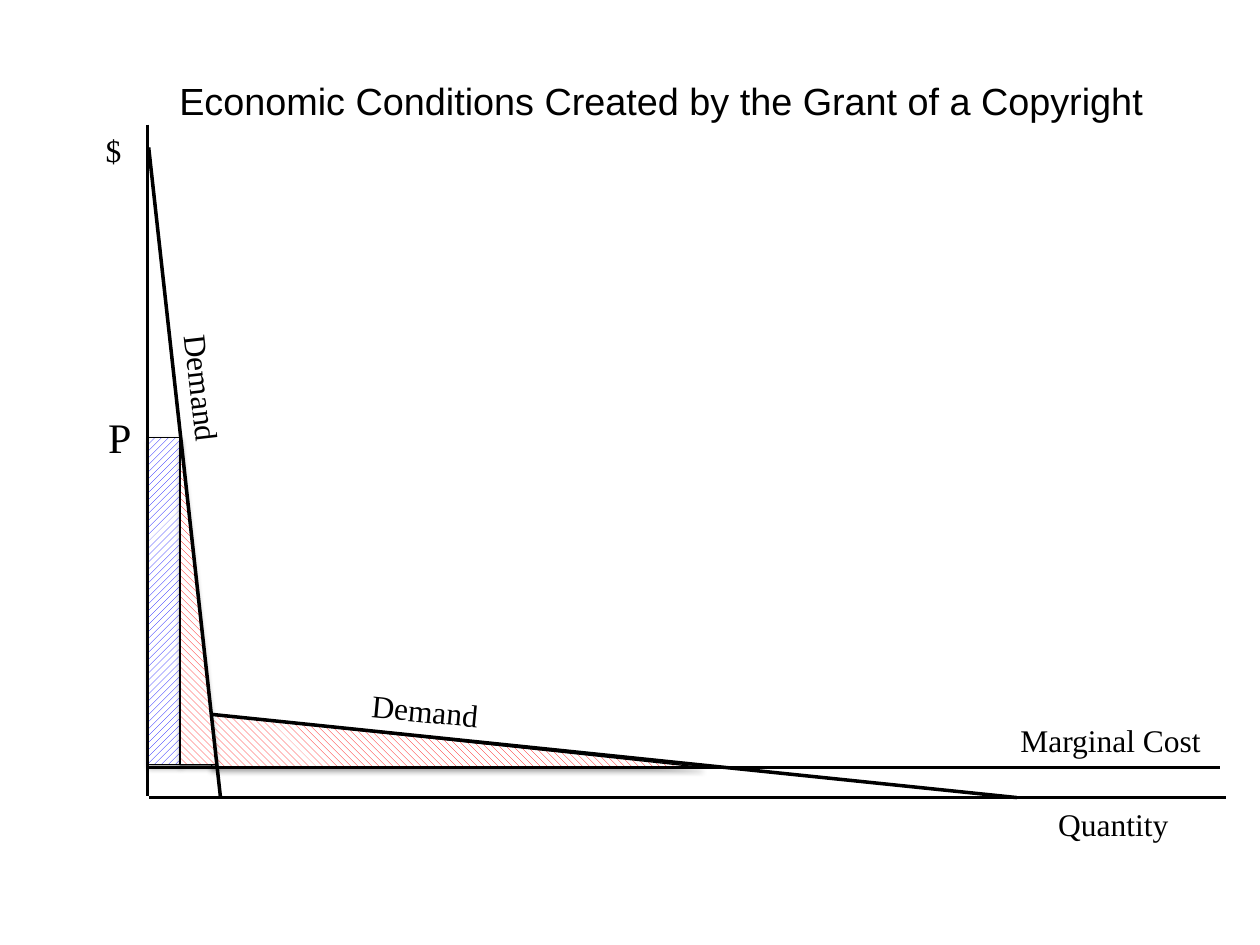
from lxml.etree import SubElement
from pptx import Presentation
from pptx.dml.color import RGBColor
from pptx.enum.dml import MSO_PATTERN
from pptx.enum.shapes import MSO_CONNECTOR, MSO_SHAPE
from pptx.enum.text import MSO_ANCHOR, PP_ALIGN
from pptx.oxml.ns import qn
from pptx.util import Inches, Pt

THEME = {
    "ink": RGBColor(0, 0, 0),
    "paper": RGBColor(255, 255, 255),
    "profit": RGBColor(0, 0, 255),
    "loss": RGBColor(255, 0, 0),
    "title": {"name": "Arial", "size": Pt(21.6)},
    "label": {"name": "Times New Roman", "size": Pt(18)},
    "price": {"name": "Times New Roman", "size": Pt(24)},
    "curve": Pt(2),
    "outline": Pt(0.75),
}

# Shared positions in the diagram, in inches
AXIS_X, AXIS_Y = 1.18, 6.33
COST_Y, PRICE_Y = 6.09, 3.47
KINK_X, KINK_Y = 1.68, 5.67


def write(shape, text, style):
    """Put one line of text in the shape and format it with a theme style."""
    paragraph = shape.text_frame.paragraphs[0]
    run = paragraph.add_run()
    run.text = text
    for name, value in THEME[style].items():
        setattr(run.font, name, value)
    run.font.color.rgb = THEME["ink"]
    return paragraph


presentation = Presentation()
presentation.slide_width, presentation.slide_height = Inches(10), Inches(7.5)
slide = presentation.slides.add_slide(presentation.slide_layouts[5])

# Title
title = slide.shapes.title
title.left, title.top, title.width, title.height = map(Inches, (1, 0.42, 8.5, 0.75))
title.text_frame.vertical_anchor = MSO_ANCHOR.MIDDLE
write(title, "Economic Conditions Created by the Grant of a Copyright",
      "title").alignment = PP_ALIGN.CENTER

# Labels: text, style, left, top, width, height, rotation
labels = [
    ("$", "label", 0.74, 0.99, 0.51, 0.4, 0),
    ("Quantity", "label", 8.3, 6.34, 1.43, 0.4, 0),
    ("Marginal Cost", "label", 8, 5.67, 2.26, 0.4, 0),
    ("Demand", "label", 0.77, 3.23, 1.75, 0.4, 83.4),
    ("Demand", "label", 2.85, 5.47, 1.75, 0.4, 5.4),
    ("P", "price", 0.76, 3.22, 0.38, 0.5, 0),
]
for text, style, left, top, width, height, rotation in labels:
    box = slide.shapes.add_textbox(*map(Inches, (left, top, width, height)))
    box.rotation = rotation
    box.text_frame.word_wrap = style == "label"
    write(box, text, style)

# Hatched areas: monopoly profit, then the two deadweight losses
up, down = MSO_PATTERN.WIDE_UPWARD_DIAGONAL, MSO_PATTERN.WIDE_DOWNWARD_DIAGONAL
areas = [
    (MSO_SHAPE.RECTANGLE, up, "profit", AXIS_X, PRICE_Y, 0.25, 2.6),
    (MSO_SHAPE.RIGHT_TRIANGLE, down, "loss", KINK_X, KINK_Y, 3.89, 0.42),
    (MSO_SHAPE.RIGHT_TRIANGLE, down, "loss", 1.43, PRICE_Y, 0.29, 2.6),
]
for kind, pattern, color, left, top, width, height in areas:
    area = slide.shapes.add_shape(kind, *map(Inches, (left, top, width, height)))
    area.fill.patterned()
    area.fill.pattern = pattern
    area.fill.fore_color.rgb = THEME[color]
    area.fill.back_color.rgb = THEME["paper"]
    area.line.color.rgb = THEME["ink"]
    area.line.width = THEME["outline"]
    area.shadow.inherit = False
    effects = area._element.spPr.find(qn("a:effectLst"))
    shadow = SubElement(effects, qn("a:outerShdw"), blurRad=str(Pt(3.1)),
                        dist=str(Pt(1.8)), dir="5400000", rotWithShape="0")
    shadow_color = SubElement(shadow, qn("a:srgbClr"), val=str(THEME["ink"]))
    SubElement(shadow_color, qn("a:alpha"), val="35000")

# Axes, demand curves and marginal cost: start x, start y, end x, end y
lines = [
    (1.17, 0.99, 1.17, 6.32),
    (AXIS_X, AXIS_Y, 9.73, AXIS_Y),
    (AXIS_X, 1.17, 1.75, AXIS_Y),
    (KINK_X, KINK_Y, 8.07, AXIS_Y),
    (AXIS_X, COST_Y, 9.68, COST_Y),
]
for ends in lines:
    line = slide.shapes.add_connector(MSO_CONNECTOR.STRAIGHT, *map(Inches, ends))
    line.line.color.rgb = THEME["ink"]
    line.line.width = THEME["curve"]
    SubElement(line._element.spPr, qn("a:effectLst"))

presentation.save("out.pptx")
